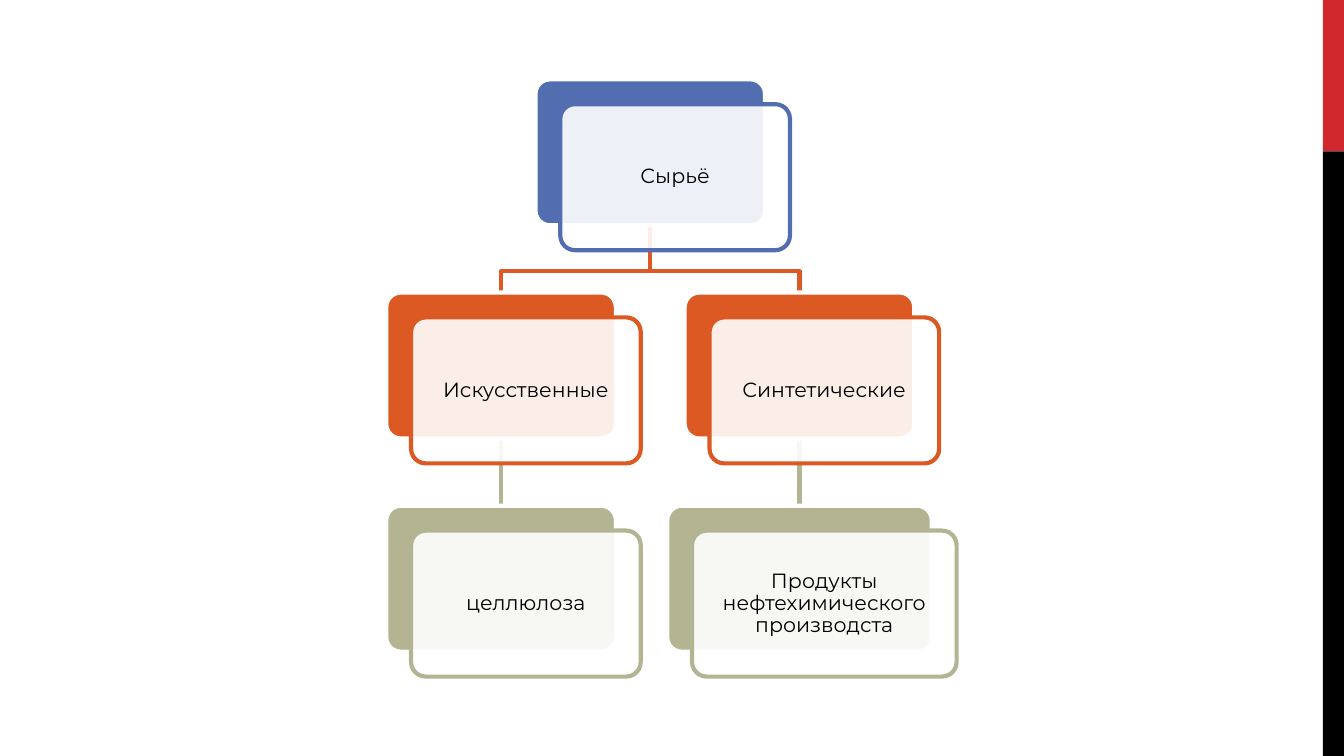
from dataclasses import dataclass

from lxml import etree
from pptx import Presentation
from pptx.dml.color import RGBColor
from pptx.enum.shapes import MSO_CONNECTOR, MSO_SHAPE
from pptx.enum.text import MSO_ANCHOR, PP_ALIGN
from pptx.oxml.ns import qn
from pptx.util import Cm, Pt

RECT, ROUND = MSO_SHAPE.RECTANGLE, MSO_SHAPE.ROUNDED_RECTANGLE
STRAIGHT = MSO_CONNECTOR.STRAIGHT
MIDDLE, CENTER = MSO_ANCHOR.MIDDLE, PP_ALIGN.CENTER
TOP, BOTTOM = 0, 2


@dataclass(frozen=True)
class Theme:
    font: str = "Montserrat"
    size: float = 11
    line: float = 2.25
    blue: str = "526DB0"
    orange: str = "DC5924"
    olive: str = "B4B392"
    red: str = "D1282E"
    black: str = "000000"
    white: str = "FFFFFF"


class Chart:
    """Draws tree parts on one slide; all lengths are in centimetres."""

    width, height = 4.34, 2.76
    shift = 0.47

    def __init__(self, slide, theme):
        self.slide, self.theme = slide, theme

    def box(self, kind, left, top, width, height, fill, line=None):
        shape = self.slide.shapes.add_shape(
            kind, Cm(left), Cm(top), Cm(width), Cm(height))
        shape.shadow.inherit = False
        shape.fill.solid()
        shape.fill.fore_color.rgb = RGBColor.from_string(fill)
        if line:
            self.stroke(shape, line)
            shape.adjustments[0] = 0.1
        else:
            shape.line.fill.background()
        return shape

    def stroke(self, shape, color):
        shape.line.color.rgb = RGBColor.from_string(color)
        shape.line.width = Pt(self.theme.line)

    def card(self, mid, top, text, color, width=width):
        """Add a solid card with a pale, shifted label card; return the solid one."""
        left = mid - width / 2
        back = self.box(ROUND, left, top, width, self.height,
                        color, self.theme.white)
        front = self.box(ROUND, left + self.shift, top + self.shift,
                         width, self.height, self.theme.white, color)
        tint = front.fill._xPr.find(qn("a:solidFill"))[0]
        etree.SubElement(tint, qn("a:alpha"), val="90000")
        self.label(front.text_frame, text)
        return back

    def label(self, frame, text):
        frame.word_wrap = True
        frame.vertical_anchor = MIDDLE
        frame.margin_left = frame.margin_right = Cm(0.12)
        frame.margin_top = frame.margin_bottom = Cm(0.12)
        para = frame.paragraphs[0]
        para.text = text
        para.alignment = CENTER
        para.line_spacing = 0.9
        para.font.name = self.theme.font
        para.font.size = Pt(self.theme.size)
        para.font.color.rgb = RGBColor.from_string(self.theme.black)

    def elbow(self, start, end, bend, color):
        """Draw a stepped line that turns at height bend."""
        (left, top), (right, base) = start, end
        path = self.slide.shapes.build_freeform(Cm(left), Cm(top))
        path.add_line_segments(
            [(Cm(left), Cm(bend)), (Cm(right), Cm(bend)),
             (Cm(right), Cm(base))], close=False)
        shape = path.convert_to_shape()
        shape.shadow.inherit = False
        shape.fill.background()
        self.stroke(shape, color)

    def link(self, mid, top, base, color):
        line = self.slide.shapes.add_connector(
            STRAIGHT, Cm(mid), Cm(top), Cm(mid), Cm(base))
        self.stroke(line, color)
        etree.SubElement(line._element.spPr, qn("a:effectLst"))
        return line


def main():
    deck = Presentation()
    deck.slide_width, deck.slide_height = Cm(25.4), Cm(14.29)
    theme = Theme()
    chart = Chart(deck.slides.add_slide(deck.slide_layouts[6]), theme)

    chart.box(RECT, 25, 0, 0.4, 2.86, theme.red)
    chart.box(RECT, 25, 2.86, 0.4, 11.43, theme.black)

    root, step = 12.29, 2.82
    first, second, third = (1.5 + 4.03 * row for row in range(3))
    branches = [
        (root - step, "Искусственные", "целлюлоза", chart.width),
        (root + step, "Синтетические",
         "Продукты нефтехимического производста", 5),
    ]

    # Lines come first so that the pale cards cover them.
    links = []
    for mid, *_ in branches:
        links.append(chart.link(mid, second + chart.height, third, theme.olive))
        chart.elbow((root, first + chart.height), (mid, second),
                    second - 0.4, theme.orange)

    chart.card(root, first, "Сырьё", theme.blue)
    for link, (mid, kind, source, width) in zip(links, branches):
        upper = chart.card(mid, second, kind, theme.orange)
        lower = chart.card(mid, third, source, theme.olive, width)
        link.begin_connect(upper, BOTTOM)
        link.end_connect(lower, TOP)

    deck.save("out.pptx")


if __name__ == "__main__":
    main()
